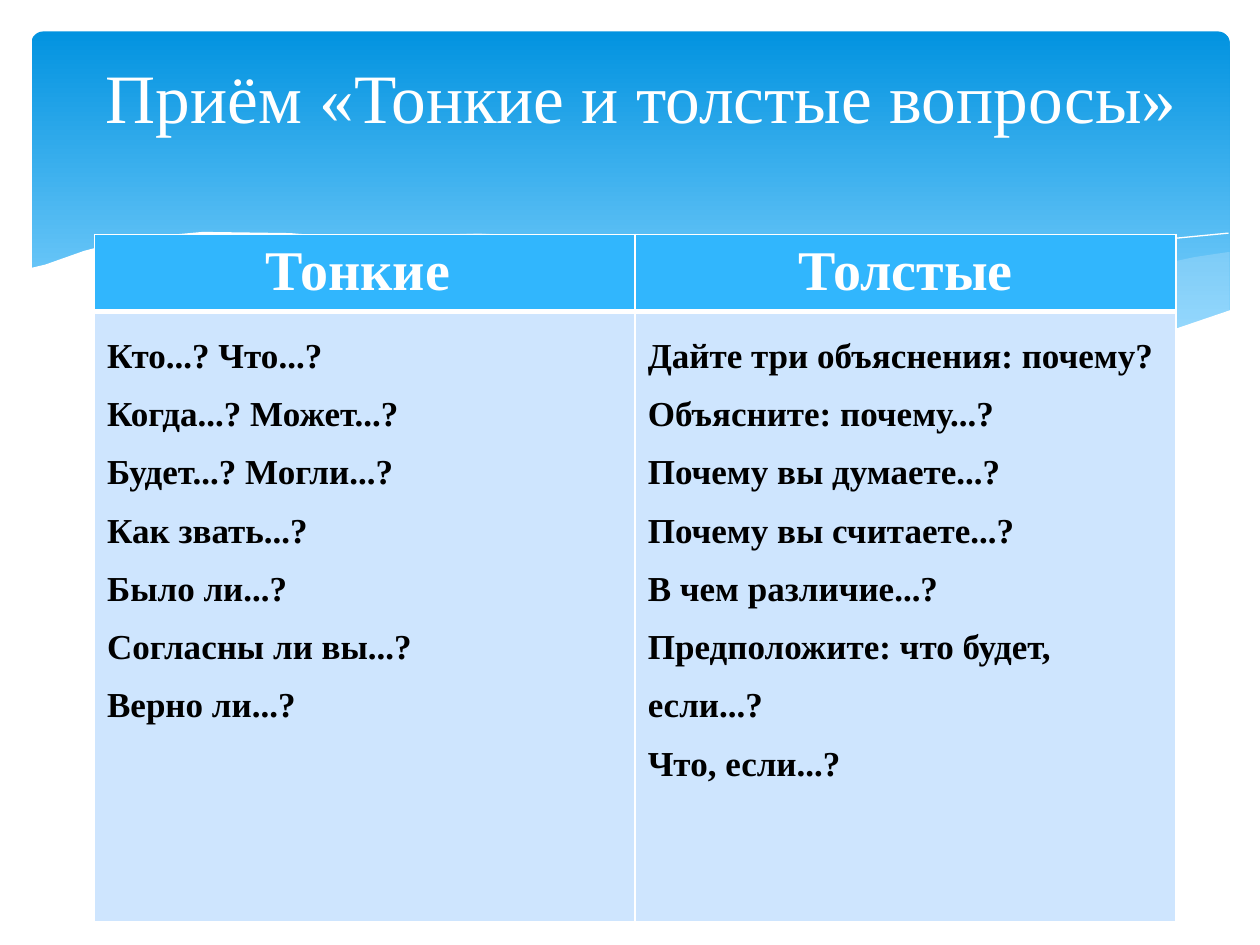
from lxml import etree
from pptx import Presentation
from pptx.dml.color import RGBColor
from pptx.enum.shapes import MSO_SHAPE
from pptx.enum.text import MSO_ANCHOR, PP_ALIGN
from pptx.oxml.ns import qn
from pptx.util import Pt

ROUND = MSO_SHAPE.ROUNDED_RECTANGLE
MIDDLE = MSO_ANCHOR.MIDDLE
LEFT, CENTER = PP_ALIGN.LEFT, PP_ALIGN.CENTER
FONT = "Times New Roman"


def color(code):
    return RGBColor.from_string(code)


def style(para, size, code, bold, align):
    para.alignment = align
    para.font.name, para.font.size = FONT, Pt(size)
    para.font.bold = bold
    para.font.color.rgb = color(code)


prs = Presentation()
prs.slide_width, prs.slide_height = Pt(720), Pt(540)
slide = prs.slides.add_slide(prs.slide_layouts[6])
shapes = slide.shapes

# Blue banner
banner = shapes.add_shape(ROUND, Pt(18), Pt(18), Pt(684.7), Pt(194.4))
banner.adjustments[0] = 0.034
banner.shadow.inherit = False
banner.line.fill.background()
banner.fill.gradient()
banner.fill.gradient_angle = 270
for stop, (pos, code) in zip(banner.fill.gradient_stops,
                             [(0, "0293E0"), (0.9, "83D3FE")]):
    stop.position = pos
    stop.color.rgb = color(code)

# Waves: fill, opacity in percent, outline points; no fill means an open line
waves = [
    ("C6E7FC", 29, [
        (702, 144), (682.6, 146.9), (652.3, 153.4), (619.9, 160.6),
        (560.9, 174.2), (508.3, 185), (475.9, 190.8), (507.6, 195.1),
        (545, 198.7), (586.1, 200.2), (621.4, 198.7), (651.6, 193.7),
        (673.2, 188.6), (693.4, 181.4), (702.7, 177.8), (702.7, 144)]),
    ("C6E7FC", 40, [
        (643, 196.6), (602.6, 190.8), (558, 182.9), (508.3, 172.8),
        (452.9, 159.8), (420.5, 151.9), (389.5, 146.2), (352, 141.1),
        (318.2, 136.1), (273.6, 133.2), (236.2, 134.6), (206, 137.5),
        (246.2, 143.3), (290.9, 151.9), (323.3, 159.8), (381.6, 172.8),
        (432.7, 183.6), (478.8, 191.5), (520, 197.3), (556.6, 199.4),
        (589, 200.2), (617, 199.4)]),
    (None, 100, [
        (222.5, 140.4), (254.2, 136.1), (299.5, 134.6), (352.1, 136.8),
        (419, 144), (478.8, 153.4), (547.2, 167.8), (598.3, 180.7),
        (653, 195.8)]),
    (None, 100, [
        (441.4, 185), (500.4, 169.2), (558.7, 155.5), (623.5, 143.3),
        (665.3, 136.8), (702, 133.2)]),
    ("FFFFFF", 100, [
        (703.4, 177.1), (669.6, 188.6), (638.6, 195.1), (602.6, 198.7),
        (558.7, 198.7), (509.8, 194.4), (450.7, 185.8), (380.9, 172.1),
        (321.8, 158.4), (262.8, 145.4), (210.2, 136.8), (165.6, 133.2),
        (115.9, 132.5), (76.3, 136.1), (48.2, 143.3), (25.9, 151.2),
        (16.6, 153.4), (16.6, 236.9), (703.4, 236.9)]),
]
for code, alpha, spots in waves:
    first, *rest = [(Pt(x), Pt(y)) for x, y in spots]
    pen = shapes.build_freeform(*first)
    pen.add_line_segments(rest, close=code is not None)
    wave = pen.convert_to_shape()
    wave.shadow.inherit = False
    if code is None:
        wave.fill.background()
        wave.line.color.rgb = color("FFFFFF")
        wave.line.width = Pt(0)
        continue
    wave.line.fill.background()
    wave.fill.solid()
    wave.fill.fore_color.rgb = color(code)
    if alpha < 100:
        tint = wave.fill._xPr.find(".//" + qn("a:srgbClr"))
        etree.SubElement(tint, qn("a:alpha"), val=str(alpha * 1000))

# Table of question types
thin = ["Кто...? Что...?", "Когда...? Может...?", "Будет...? Могли...?",
        "Как звать...?", "Было ли...?", "Согласны ли вы...?",
        "Верно ли...?"]
thick = ["Дайте три объяснения: почему?", "Объясните: почему...?",
         "Почему вы думаете...?", "Почему вы считаете...?",
         "В чем различие...?", "Предположите: что будет, если...?",
         "Что, если...?"]
rows = [[["Тонкие "], ["Толстые"]], [thin, thick]]
# Fill, text size, text colour, alignment, line spacing, row height
looks = [("31B6FD", 32, "FFFFFF", CENTER, 1, 44),
         ("CEE5FE", 20, "000000", LEFT, 1.5, 349)]
# Border widths: left, right, top, bottom
edges = [(1, 1, 1, 3), (1, 1, 3, 1)]

table = shapes.add_table(2, 2, Pt(54), Pt(134), Pt(618), Pt(393)).table
for r, (back, size, ink, align, space, high) in enumerate(looks):
    table.rows[r].height = Pt(high)
    for c, lines in enumerate(rows[r]):
        cell = table.cell(r, c)
        cell.text = "\n".join(lines)
        for para in cell.text_frame.paragraphs:
            style(para, size, ink, True, align)
            para.line_spacing = space
        props = cell._tc.get_or_add_tcPr()
        for side, width in zip("LRTB", edges[r]):
            edge = etree.SubElement(props, qn("a:ln" + side),
                                    w=str(Pt(width)))
            solid = etree.SubElement(edge, qn("a:solidFill"))
            etree.SubElement(solid, qn("a:srgbClr"), val="FFFFFF")
        cell.fill.solid()
        cell.fill.fore_color.rgb = color(back)

# Title
title = shapes.add_textbox(Pt(42.5), Pt(15), Pt(648), Pt(79))
frame = title.text_frame
frame.word_wrap = True
frame.vertical_anchor = MIDDLE
frame.text = "Приём «Тонкие и толстые вопросы»"
style(frame.paragraphs[0], 39.6, "FFFFFF", False, CENTER)

prs.save("out.pptx")
